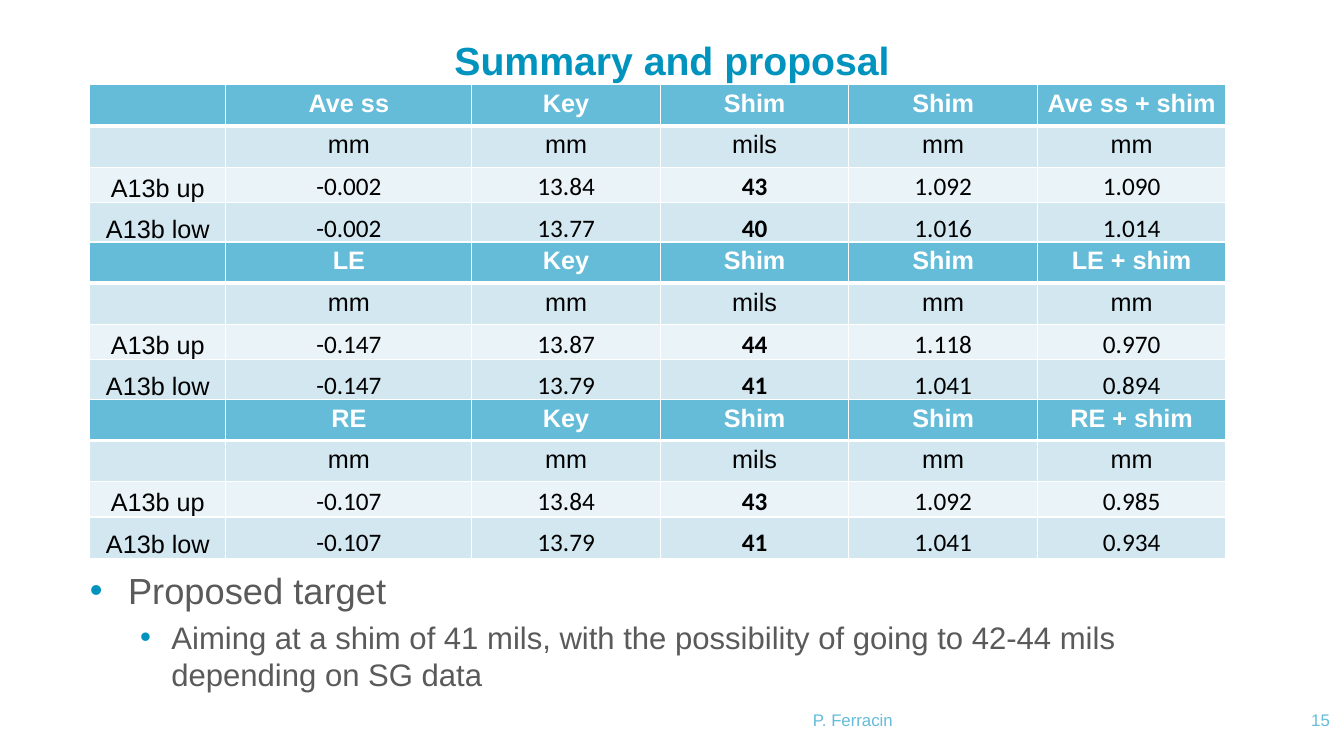
"""Build the shim summary slide with three measurement tables."""
from dataclasses import dataclass

from lxml import etree
from pptx import Presentation
from pptx.dml.color import RGBColor
from pptx.enum.text import MSO_ANCHOR, MSO_AUTO_SIZE, PP_ALIGN
from pptx.oxml.ns import qn
from pptx.util import Inches, Pt

LEFT, MID, RIGHT = PP_ALIGN.LEFT, PP_ALIGN.CENTER, PP_ALIGN.RIGHT
TOP, CENTER, BASE = MSO_ANCHOR.TOP, MSO_ANCHOR.MIDDLE, MSO_ANCHOR.BOTTOM
FIXED = MSO_AUTO_SIZE.NONE
BLUE = RGBColor(0x00, 0x93, 0xBE)
SKY = RGBColor(0x64, 0xBC, 0xD9)
PALE = RGBColor(0xD3, 0xE7, 0xF1)
MIST = RGBColor(0xEA, 0xF3, 0xF8)
GRAY = RGBColor(0x5A, 0x5A, 0x5A)
WHITE = RGBColor(0xFF, 0xFF, 0xFF)
BLACK = RGBColor(0x00, 0x00, 0x00)
SIDE = 0.89
FIRST, PITCH = 0.84, 1.56
COLS = (1.35, 2.44, 1.87, 1.87, 1.87, 1.87)
ROWS = (0.41, 0.41, 0.35, 0.41)
FILLS = (SKY, PALE, MIST, PALE)
UNITS = ("", "mm", "mm", "mils", "mm", "mm")
BOLD_COL = 3


@dataclass
class Group:
    """Readings of one table: the measure and its two rows of values."""
    name: str
    upper: tuple[str, ...]
    lower: tuple[str, ...]


@dataclass
class Note:
    """Footer text with its place and alignment."""
    text: str
    left: float
    width: float
    align: PP_ALIGN


@dataclass
class Point:
    """Bullet with its level, size, indents and space before."""
    text: str
    level: int
    size: float
    margin: float
    hang: float
    gap: float


GROUPS = (
    Group("Ave ss", ("-0.002", "13.84", "43", "1.092", "1.090"),
          ("-0.002", "13.77", "40", "1.016", "1.014")),
    Group("LE", ("-0.147", "13.87", "44", "1.118", "0.970"),
          ("-0.147", "13.79", "41", "1.041", "0.894")),
    Group("RE", ("-0.107", "13.84", "43", "1.092", "0.985"),
          ("-0.107", "13.79", "41", "1.041", "0.934")),
)
NOTES = (Note("P. Ferracin", 4.48, 7.96, MID), Note("15", 12.67, 0.52, RIGHT))
POINTS = (
    Point("Proposed target", 0, 25.9, 0.38, 0.38, 0),
    Point("Aiming at a shim of 41 mils, with the possibility of going to "
          "42-44 mils depending on SG data", 1, 22.2, 0.81, 0.31, 4.4),
)


def write(para, text: str, *, size: float = 18, color: RGBColor = BLACK,
          bold: bool = False, face: str = "Arial", align: PP_ALIGN = MID,
          gap: float = 0) -> None:
    """Put formatted text into a paragraph."""
    para.alignment = align
    para.space_before = Pt(gap)
    run = para.add_run()
    run.text = text
    run.font.size = Pt(size)
    run.font.name = face
    run.font.bold = bold
    run.font.color.rgb = color


def place(shape, left: float, top: float, width: float, height: float,
          anchor: MSO_ANCHOR):
    """Set the box of a text shape and return its bare frame."""
    shape.left, shape.top = Inches(left), Inches(top)
    shape.width, shape.height = Inches(width), Inches(height)
    frame = shape.text_frame
    frame.word_wrap = True
    frame.auto_size = FIXED
    frame.vertical_anchor = anchor
    frame.margin_left = frame.margin_right = 0
    frame.margin_top = frame.margin_bottom = 0
    return frame


def bullet(para, item: Point) -> None:
    """Fill a paragraph with a bulleted point."""
    para.level = item.level
    props = para._p.get_or_add_pPr()
    props.set("marL", str(Inches(item.margin)))
    props.set("indent", str(-Inches(item.hang)))
    tint = etree.SubElement(props, qn("a:buClr"))
    etree.SubElement(tint, qn("a:srgbClr"), val=str(BLUE))
    etree.SubElement(props, qn("a:buFont"), typeface="Arial")
    etree.SubElement(props, qn("a:buChar"), char="•")
    write(para, item.text, size=item.size, color=GRAY, align=LEFT,
          gap=item.gap)


def border(cell, row: int) -> None:
    """Draw white cell borders, thick below the header row."""
    props = cell._tc.get_or_add_tcPr()
    widths = {"L": 1, "R": 1, "T": 3 if row == 1 else 1,
              "B": 3 if row == 0 else 1}
    for side, width in widths.items():
        line = etree.SubElement(props, qn(f"a:ln{side}"), w=str(Pt(width)))
        fill = etree.SubElement(line, qn("a:solidFill"))
        etree.SubElement(fill, qn("a:srgbClr"), val=str(WHITE))


def style(cell, text: str, row: int, col: int) -> None:
    """Format one table cell by its row and column."""
    head, data = row == 0, row > 1
    border(cell, row)
    cell.fill.solid()
    cell.fill.fore_color.rgb = FILLS[row]
    if data:
        cell.vertical_anchor = BASE
        cell.margin_left = cell.margin_right = Inches(0.01)
        cell.margin_top, cell.margin_bottom = Inches(0.01), 0
    if text:
        write(cell.text_frame.paragraphs[0], text,
              color=WHITE if head else BLACK,
              bold=head or (data and col == BOLD_COL),
              face="Calibri" if data and col else "Arial")


def tabulate(slide, group: Group, top: float) -> None:
    """Add the table of one group."""
    head = ("", group.name, "Key", "Shim", "Shim", f"{group.name} + shim")
    lines = (head, UNITS, ("A13b up", *group.upper),
             ("A13b low", *group.lower))
    table = slide.shapes.add_table(
        len(ROWS), len(COLS), Inches(SIDE), Inches(top),
        Inches(sum(COLS)), Inches(sum(ROWS))).table
    for col, width in enumerate(COLS):
        table.columns[col].width = Inches(width)
    for row, line in enumerate(lines):
        table.rows[row].height = Inches(ROWS[row])
        for col, text in enumerate(line):
            style(table.cell(row, col), text, row, col)


def main() -> None:
    """Build and save the slide."""
    deck = Presentation()
    deck.slide_width, deck.slide_height = Inches(13.33), Inches(7.5)
    slide = deck.slides.add_slide(deck.slide_layouts[1])
    title = place(slide.shapes.title, SIDE, 0.2, 11.55, 0.79, CENTER)
    write(title.paragraphs[0], "Summary and proposal", size=28, color=BLUE,
          bold=True)
    body = place(slide.placeholders[1], SIDE, 5.64, 11.55, 1.12, TOP)
    for num, item in enumerate(POINTS):
        bullet(body.add_paragraph() if num else body.paragraphs[0], item)
    for note in NOTES:
        box = slide.shapes.add_textbox(0, 0, 0, 0)
        frame = place(box, note.left, 6.85, note.width, 0.39, BASE)
        write(frame.paragraphs[0], note.text, size=12, color=SKY,
              align=note.align)
    for num, group in enumerate(GROUPS):
        tabulate(slide, group, FIRST + num * PITCH)
    deck.save("out.pptx")


if __name__ == "__main__":
    main()
